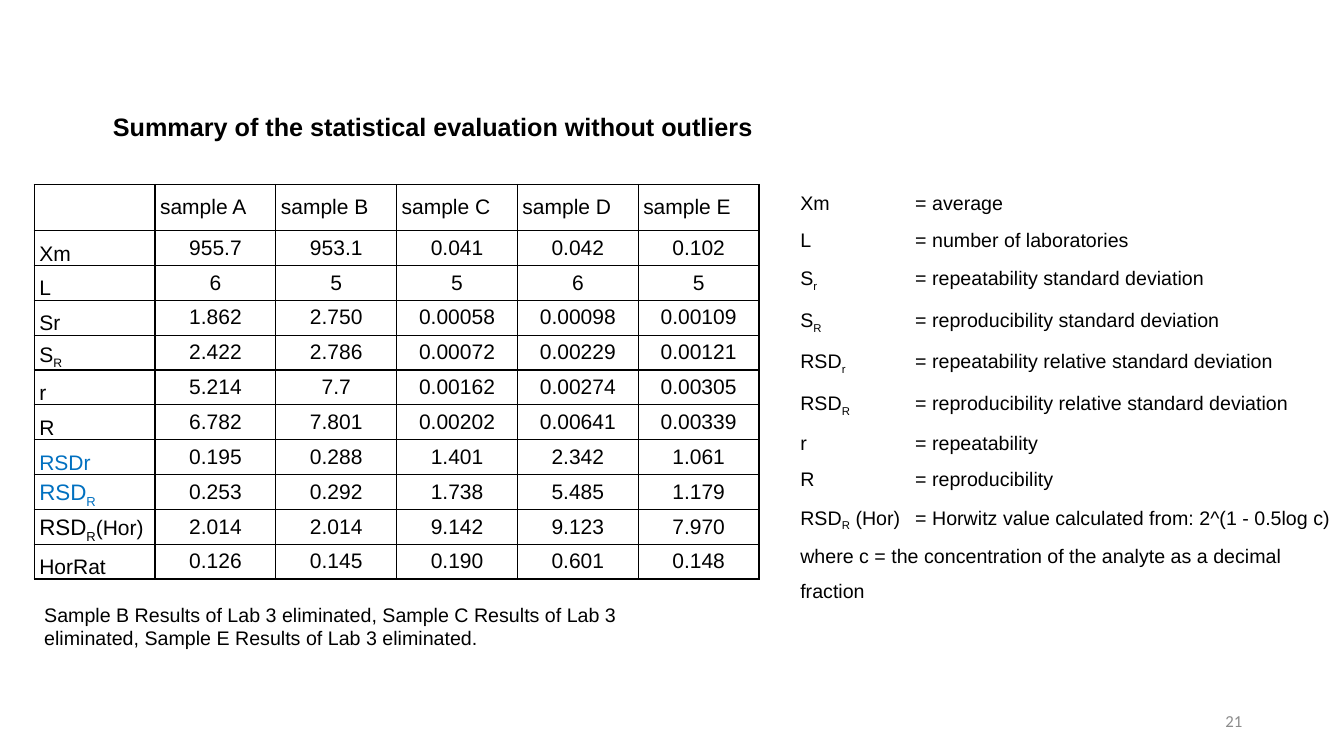
from dataclasses import dataclass

from lxml.etree import SubElement
from pptx import Presentation
from pptx.dml.color import RGBColor
from pptx.enum.text import MSO_ANCHOR, MSO_AUTO_SIZE, PP_ALIGN
from pptx.oxml import parse_xml
from pptx.oxml.ns import nsdecls, qn
from pptx.slide import Slide
from pptx.table import _Cell
from pptx.text.text import TextFrame, _Paragraph
from pptx.util import Emu, Inches, Pt


@dataclass(frozen=True)
class Theme:
    body_font: str = "Arial"
    number_font: str = "Calibri"
    ink: str = "000000"
    accent: str = "0070C0"
    muted: str = "8C8C8C"
    title_size: int = 18
    large_cell_size: int = 16
    cell_size: int = 15
    note_size: int = 14
    number_size: int = 12
    border_width: int = 1


@dataclass(frozen=True)
class Span:
    text: str
    size: int
    color: str = Theme.ink
    font: str = Theme.body_font
    bold: bool = False
    subscript: bool = False


@dataclass(frozen=True)
class Place:
    """Left, top, width and height in percent of the slide."""
    left: float
    top: float
    width: float
    height: float

    def lengths(self) -> tuple[Emu, Emu, Emu, Emu]:
        return across(self.left), down(self.top), across(self.width), down(self.height)


@dataclass(frozen=True)
class Statistic:
    label: tuple[Span, ...]
    values: str


@dataclass(frozen=True)
class Term:
    symbol: str
    meaning: str
    index: str = ""
    suffix: str = ""


THEME = Theme()
SLIDE_WIDTH, SLIDE_HEIGHT = Inches(13.33), Inches(7.5)

TITLE_PLACE = Place(7.65, 14, 62.94, 5.33)
TABLE_PLACE = Place(2.55, 24.4, 53.94, 52.2)
NOTE_PLACE = Place(2.55, 79.07, 50.04, 7.6)
LEGEND_PLACE = Place(58.81, 23.07, 41.26, 54.67)
NUMBER_PLACE = Place(70.67, 92.67, 22.5, 5.33)
HEADER_HEIGHT = 6.1
MEANING_TAB = 8.55


def across(percent: float) -> Emu:
    return Emu(round(SLIDE_WIDTH * percent / 100))


def down(percent: float) -> Emu:
    return Emu(round(SLIDE_HEIGHT * percent / 100))


def label(base: str, index: str = "", suffix: str = "",
          size: int = THEME.cell_size, color: str = THEME.ink) -> tuple[Span, ...]:
    """A symbol, its subscript and what follows it."""
    spans = (Span(base, size, color), Span(index, size, color, subscript=True),
             Span(suffix, THEME.cell_size, color))
    return tuple(span for span in spans if span.text)


SAMPLES = [f"sample {letter}" for letter in "ABCDE"]
STATISTICS = [
    Statistic(label("Xm"), "955.7 953.1 0.041 0.042 0.102"),
    Statistic(label("L"), "6 5 5 6 5"),
    Statistic(label("Sr"), "1.862 2.750 0.00058 0.00098 0.00109"),
    Statistic(label("S", "R"), "2.422 2.786 0.00072 0.00229 0.00121"),
    Statistic(label("r"), "5.214 7.7 0.00162 0.00274 0.00305"),
    Statistic(label("R"), "6.782 7.801 0.00202 0.00641 0.00339"),
    Statistic(label("RSDr", color=THEME.accent), "0.195 0.288 1.401 2.342 1.061"),
    Statistic(label("RSD", "R", size=THEME.large_cell_size, color=THEME.accent),
              "0.253 0.292 1.738 5.485 1.179"),
    Statistic(label("RSD", "R", "(Hor)", size=THEME.large_cell_size),
              "2.014 2.014 9.142 9.123 7.970"),
    Statistic(label("HorRat"), "0.126 0.145 0.190 0.601 0.148"),
]
TERMS = [
    Term("Xm", "average"),
    Term("L", "number of laboratories"),
    Term("S", "repeatability standard deviation", "r"),
    Term("S", "reproducibility standard deviation", "R"),
    Term("RSD", "repeatability relative standard deviation", "r"),
    Term("RSD", "reproducibility relative standard deviation", "R"),
    Term("r", "repeatability"),
    Term("R", "reproducibility"),
    Term("RSD", "Horwitz value calculated from: 2^(1 - 0.5log c) where c = "
         "the concentration of the analyte as a decimal fraction", "R", " (Hor)"),
]


def write(para: _Paragraph, *spans: Span) -> None:
    for span in spans:
        run = para.add_run()
        run.text = span.text
        run.font.name, run.font.size, run.font.bold = span.font, Pt(span.size), span.bold
        run.font.color.rgb = RGBColor.from_string(span.color)
        if span.subscript:
            run.font._element.set("baseline", "-25000")


def add_box(page: Slide, place: Place) -> TextFrame:
    frame = page.shapes.add_textbox(*place.lengths()).text_frame
    frame.word_wrap = True
    return frame


def set_borders(cell: _Cell) -> None:
    properties = cell._tc.get_or_add_tcPr()
    for position, side in enumerate(("lnL", "lnR", "lnT", "lnB")):
        properties.insert(position, parse_xml(
            f'<a:{side} {nsdecls("a")} w="{Pt(THEME.border_width)}"><a:solidFill>'
            f'<a:srgbClr val="{THEME.ink}"/></a:solidFill></a:{side}>'))


def fill_cell(cell: _Cell, spans: tuple[Span, ...], anchor: MSO_ANCHOR,
              alignment: PP_ALIGN, margin: float) -> None:
    cell.fill.background()
    set_borders(cell)
    cell.margin_left = cell.margin_right = Inches(margin)
    cell.margin_top = cell.margin_bottom = 0
    cell.vertical_anchor = anchor
    para = cell.text_frame.paragraphs[0]
    para.alignment = alignment
    write(para, *spans)


def add_title(page: Slide) -> None:
    title = page.shapes.title
    title.left, title.top, title.width, title.height = TITLE_PLACE.lengths()
    frame = title.text_frame
    frame.word_wrap, frame.auto_size = True, MSO_AUTO_SIZE.NONE
    frame.vertical_anchor = MSO_ANCHOR.TOP
    para = frame.paragraphs[0]
    para.alignment = PP_ALIGN.LEFT
    write(para, Span("Summary of the statistical evaluation without outliers",
                     THEME.title_size, bold=True))


def add_statistics(page: Slide) -> None:
    table = page.shapes.add_table(len(STATISTICS) + 1, len(SAMPLES) + 1,
                                  *TABLE_PLACE.lengths()).table
    table.first_row = table.horz_banding = False
    for column in table.columns:
        column.width = across(TABLE_PLACE.width / len(table.columns))
    for row in table.rows:
        row.height = down((TABLE_PLACE.height - HEADER_HEIGHT) / len(STATISTICS))
    table.rows[0].height = down(HEADER_HEIGHT)

    # Header row, then a label and five values per statistic
    for column, name in enumerate(["", *SAMPLES]):
        spans = label(name)
        fill_cell(table.cell(0, column), spans, MSO_ANCHOR.MIDDLE, PP_ALIGN.LEFT, 0.05)
    for row, statistic in enumerate(STATISTICS, start=1):
        fill_cell(table.cell(row, 0), statistic.label, MSO_ANCHOR.BOTTOM, PP_ALIGN.LEFT, 0.05)
        for column, value in enumerate(statistic.values.split(), start=1):
            fill_cell(table.cell(row, column), label(value),
                      MSO_ANCHOR.MIDDLE, PP_ALIGN.CENTER, 0.07)


def add_legend(page: Slide) -> None:
    frame = add_box(page, LEGEND_PLACE)
    for number, term in enumerate(TERMS):
        para = frame.add_paragraph() if number else frame.paragraphs[0]
        para.line_spacing, para.space_before = 1.5, Pt(1)
        tabs = SubElement(para._p.get_or_add_pPr(), qn("a:tabLst"))
        SubElement(tabs, qn("a:tab"), pos=str(across(MEANING_TAB)), algn="l")
        write(para, Span(term.symbol, THEME.note_size))
        if term.index:
            write(para, Span(term.index, THEME.note_size, subscript=True))
        write(para, Span(f"{term.suffix}\t= {term.meaning}", THEME.note_size))


def main() -> None:
    deck = Presentation()
    deck.slide_width, deck.slide_height = SLIDE_WIDTH, SLIDE_HEIGHT
    page = deck.slides.add_slide(deck.slide_layouts.get_by_name("Title Only"))
    add_title(page)
    add_statistics(page)
    add_legend(page)

    # Note under the table
    write(add_box(page, NOTE_PLACE).paragraphs[0],
          Span("Sample B Results of Lab 3 eliminated, Sample C Results of Lab 3 "
               "eliminated, Sample E Results of Lab 3 eliminated.", THEME.note_size))

    # Page number
    frame = add_box(page, NUMBER_PLACE)
    frame.vertical_anchor = MSO_ANCHOR.MIDDLE
    frame.paragraphs[0].alignment = PP_ALIGN.RIGHT
    write(frame.paragraphs[0], Span("21", THEME.number_size, THEME.muted, THEME.number_font))
    deck.save("out.pptx")


if __name__ == "__main__":
    main()
